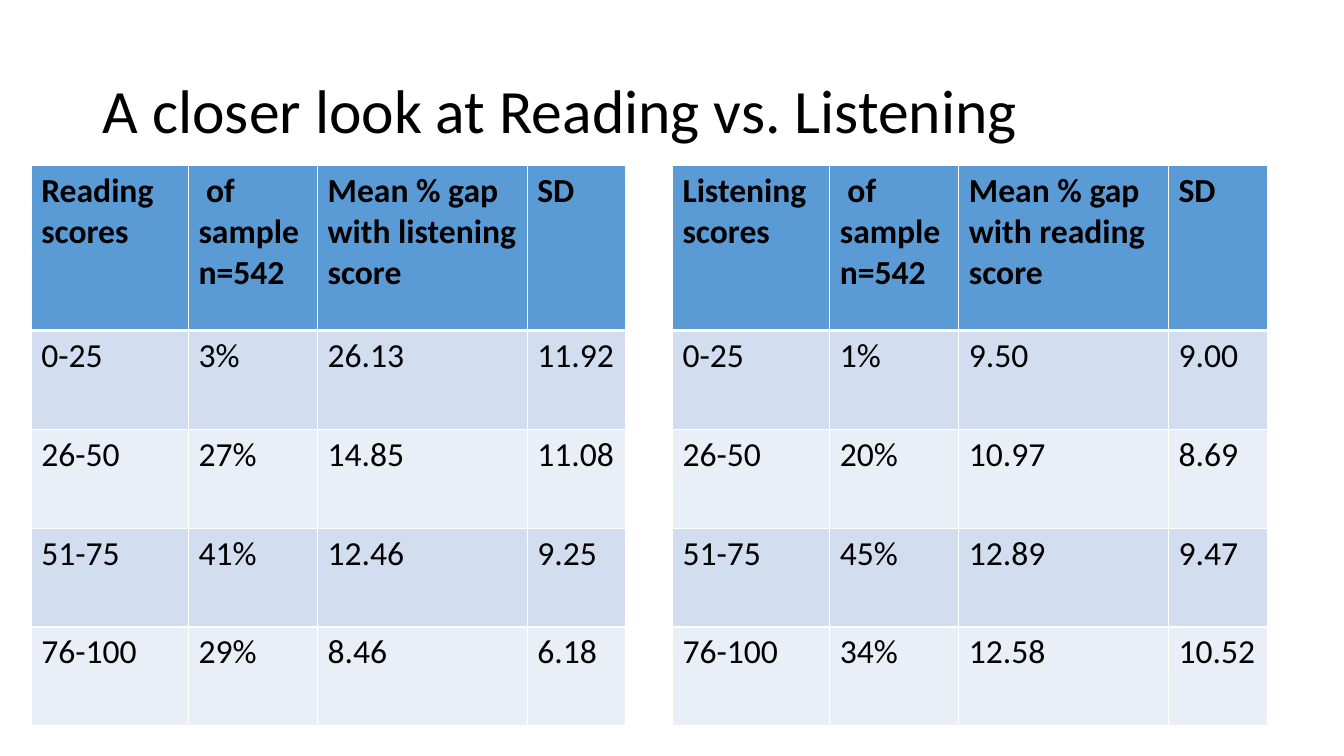
from dataclasses import dataclass

from lxml import etree
from pptx import Presentation
from pptx.dml.color import RGBColor
from pptx.enum import text
from pptx.oxml import ns
from pptx.util import Inches, Pt


@dataclass(frozen=True)
class Theme:
    font: str = "Calibri"
    ink: str = "000000"
    rule: str = "FFFFFF"
    header: str = "5B9BD5"
    bands: tuple = ("D2DEEF", "EAEFF7")
    title_size: int = 44
    table_size: int = 24
    thin: int = 1
    thick: int = 3


THEME = Theme()
COLUMN_WIDTHS = (1.56, 1.28, 2.08, 0.98)
HEADER_HEIGHT = 1.64
ROW_HEIGHT = 0.98
TABLE_TOP = 1.64

READING = (
    ("Reading scores", " of sample\nn=542", "Mean % gap\nwith listening\nscore", "SD"),
    ("0-25", "3%", "26.13", "11.92"),
    ("26-50", "27%", "14.85", "11.08"),
    ("51-75", "41%", "12.46", "9.25"),
    ("76-100", "29%", "8.46", "6.18"),
)
LISTENING = (
    ("Listening scores", " of sample\nn=542", "Mean % gap\nwith reading\nscore", "SD"),
    ("0-25", "1%", "9.50", "9.00"),
    ("26-50", "20%", "10.97", "8.69"),
    ("51-75", "45%", "12.89", "9.47"),
    ("76-100", "34%", "12.58", "10.52"),
)


def style_text(frame, size, bold=False):
    for paragraph in frame.paragraphs:
        for run in paragraph.runs:
            font = run.font
            font.name, font.size, font.bold = THEME.font, Pt(size), bold
            font.color.rgb = RGBColor.from_string(THEME.ink)


def add_borders(cell, top, bottom):
    """Rule all four sides of a cell; top and bottom are widths in points."""
    properties = cell._tc.get_or_add_tcPr()
    widths = {"lnL": THEME.thin, "lnR": THEME.thin, "lnT": top, "lnB": bottom}
    for side, width in widths.items():
        line = etree.SubElement(properties, ns.qn(f"a:{side}"), w=str(Pt(width)))
        fill = etree.SubElement(line, ns.qn("a:solidFill"))
        etree.SubElement(fill, ns.qn("a:srgbClr"), val=THEME.rule)


def add_title(slide, left, top, width, height):
    title = slide.shapes.title
    title.left, title.top = Inches(left), Inches(top)
    title.width, title.height = Inches(width), Inches(height)
    frame = title.text_frame
    frame.text = "A closer look at Reading vs. Listening"
    frame.vertical_anchor = text.MSO_ANCHOR.MIDDLE
    frame.paragraphs[0].alignment = text.PP_ALIGN.LEFT
    frame.paragraphs[0].line_spacing = 0.9
    style_text(frame, THEME.title_size)


def add_score_table(slide, left, top, rows):
    height = HEADER_HEIGHT + ROW_HEIGHT * (len(rows) - 1)
    table = slide.shapes.add_table(
        len(rows), len(COLUMN_WIDTHS), Inches(left), Inches(top),
        Inches(sum(COLUMN_WIDTHS)), Inches(height)).table
    for column, width in zip(table.columns, COLUMN_WIDTHS):
        column.width = Inches(width)
    for r, values in enumerate(rows):
        is_header = r == 0
        table.rows[r].height = Inches(HEADER_HEIGHT if is_header else ROW_HEIGHT)
        color = THEME.header if is_header else THEME.bands[(r - 1) % 2]
        for c, value in enumerate(values):
            cell = table.cell(r, c)
            cell.text_frame.text = value
            style_text(cell.text_frame, THEME.table_size, bold=is_header)
            add_borders(cell, top=THEME.thick if r == 1 else THEME.thin,
                        bottom=THEME.thick if is_header else THEME.thin)
            cell.fill.solid()
            cell.fill.fore_color.rgb = RGBColor.from_string(color)


def main():
    deck = Presentation()
    deck.slide_width, deck.slide_height = Inches(13.33), Inches(7.5)
    slide = deck.slides.add_slide(deck.slide_layouts.get_by_name("Title Only"))
    add_title(slide, 0.92, 0.4, 11.5, 1.45)
    add_score_table(slide, 0.31, TABLE_TOP, READING)
    add_score_table(slide, 6.67, TABLE_TOP, LISTENING)
    deck.save("out.pptx")


if __name__ == "__main__":
    main()
